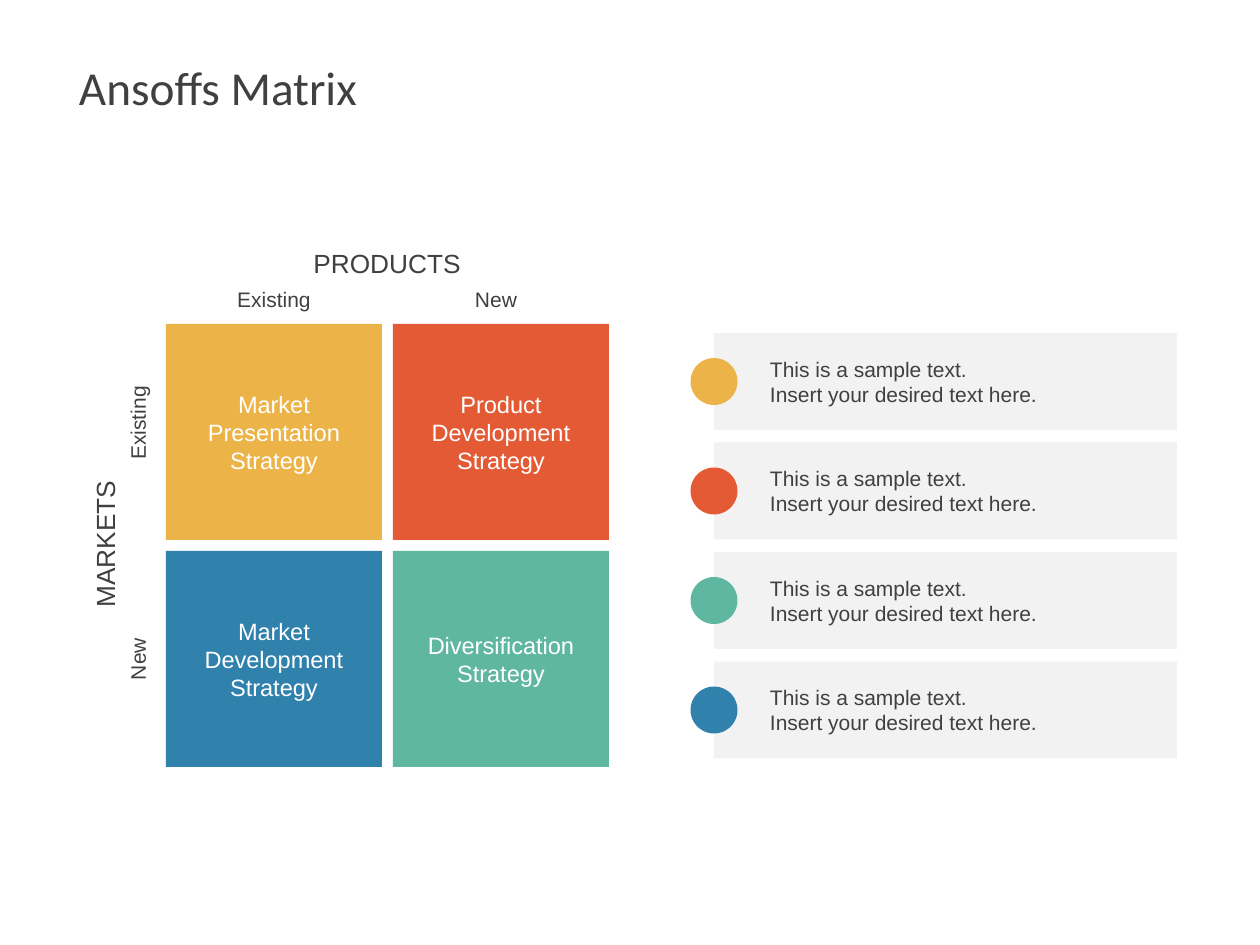
"""Build the Ansoffs Matrix slide."""
import pptx
import pptx.util
import pptx.dml.color
import pptx.enum.shapes
import pptx.enum.text

SCALE = 914400 / 126
HUES = {
    "gold": "ECB448", "red": "E35A35", "teal": "5FB7A2", "blue": "3081AC",
    "pale": "F2F2F2", "dark": "404040", "white": "FFFFFF",
}
TITLE = "Ansoffs Matrix"
TILES = [
    (0, 0, "gold", ["Market", "Presentation", "Strategy"]),
    (1, 0, "red", ["Product", "Development", "Strategy"]),
    (0, 1, "blue", ["Market", "Development", "Strategy"]),
    (1, 1, "teal", ["Diversification", "Strategy"]),
]
NOTES = [
    (hue, ["This is a sample text.", "Insert your desired text here."])
    for hue in ("gold", "red", "teal", "blue")
]
LABELS = [
    ("PRODUCTS", 387, 263, 174, 44, 15, 0),
    ("MARKETS", 105, 544, 154, 44, 15, 270),
    ("Existing", 274, 300, 100, 38, 12, 0),
    ("New", 496, 300, 68, 38, 12, 0),
    ("Existing", 138, 423, 100, 38, 12, 270),
    ("New", 138, 659, 68, 38, 12, 270),
]
TILE = {"left": 166, "top": 324, "size": 216, "step": 227}
BAR = {"left": 714, "top": 333, "wide": 463, "high": 97, "gap": 25 / 2}
DOT = 47

KIND = pptx.enum.shapes.MSO_SHAPE
ALIGN = pptx.enum.text.PP_ALIGN
ANCHOR = pptx.enum.text.MSO_ANCHOR
FIT = pptx.enum.text.MSO_AUTO_SIZE


def emu(px):
    return round(px * SCALE)


def color(hue):
    return pptx.dml.color.RGBColor.from_string(HUES[hue])


def write(shape, lines, size, hue="dark", font="Arial", align=ALIGN.LEFT,
          anchor=ANCHOR.MIDDLE, pad=(13, 6), wrap=True):
    frame = shape.text_frame
    frame.word_wrap = wrap
    frame.auto_size = FIT.NONE if wrap else FIT.SHAPE_TO_FIT_TEXT
    frame.vertical_anchor = anchor
    frame.margin_left, frame.margin_right = emu(pad[0]), emu(13)
    frame.margin_top = frame.margin_bottom = emu(pad[1])
    for i, line in enumerate(lines):
        para = frame.add_paragraph() if i else frame.paragraphs[0]
        para.alignment = align
        run = para.add_run()
        run.text = line
        run.font.size = pptx.util.Pt(size)
        run.font.name = font
        run.font.color.rgb = color(hue)


def draw(slide, kind, hue, *box):
    shape = slide.shapes.add_shape(kind, *map(emu, box))
    shape.shadow.inherit = False
    shape.fill.solid()
    shape.fill.fore_color.rgb = color(hue)
    shape.line.fill.background()
    return shape


def add_text(slide, *box):
    return slide.shapes.add_textbox(*map(emu, box))


def main():
    deck = pptx.Presentation()
    deck.slide_width, deck.slide_height = emu(1260), emu(945)
    slide = deck.slides.add_slide(deck.slide_layouts[6])

    write(add_text(slide, 63, 38, 1134, 98), [TITLE], 27,
          font="Calibri", pad=(16, 9))

    for col, row, hue, lines in TILES:
        left = TILE["left"] + col * TILE["step"]
        top = TILE["top"] + row * TILE["step"]
        tile = draw(slide, KIND.RECTANGLE, hue, left, top,
                    TILE["size"], TILE["size"])
        write(tile, lines, 13.5, hue="white", align=ALIGN.CENTER)

    for text, mid_x, mid_y, wide, high, size, turn in LABELS:
        label = add_text(slide, mid_x - wide / 2, mid_y - high / 2, wide, high)
        label.rotation = turn
        write(label, [text], size, align=ALIGN.CENTER,
              anchor=ANCHOR.TOP, wrap=False)

    for i, (hue, lines) in enumerate(NOTES):
        top = BAR["top"] + i * (BAR["high"] + BAR["gap"])
        bar = draw(slide, KIND.RECTANGLE, "pale", BAR["left"], top,
                   BAR["wide"], BAR["high"])
        write(bar, lines, 12, pad=(56, 6))
        draw(slide, KIND.OVAL, hue, BAR["left"] - DOT / 2,
             top + (BAR["high"] - DOT) / 2, DOT, DOT)

    deck.save("out.pptx")


if __name__ == "__main__":
    main()
